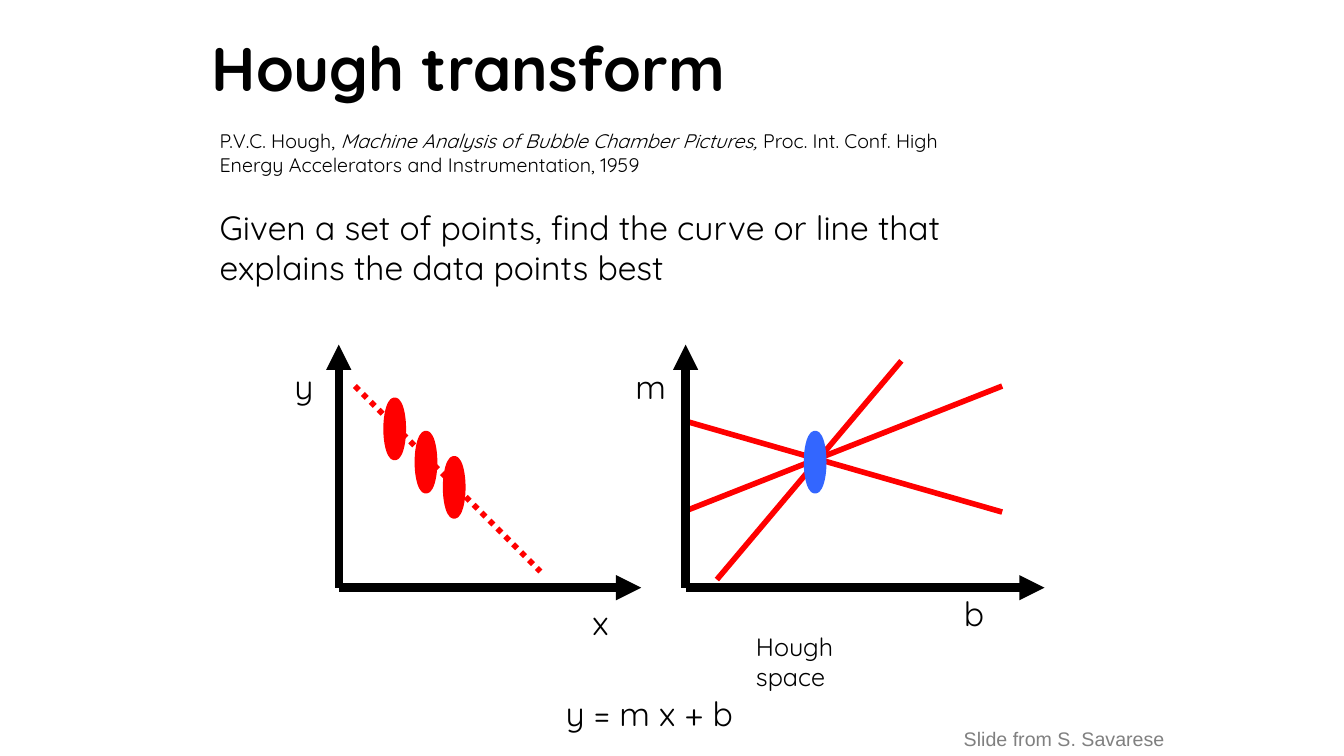
import pptx
import pptx.dml.color
import pptx.enum.dml
import pptx.enum.shapes
import pptx.enum.text
import pptx.oxml
import pptx.oxml.ns
import pptx.util
from dataclasses import dataclass

Inches = pptx.util.Inches
Align = pptx.enum.text.PP_ALIGN
Anchor = pptx.enum.text.MSO_ANCHOR


@dataclass(frozen=True)
class Theme:
    font: str = "Quicksand"
    credit_font: str = "Arial"
    ink: str = "000000"
    data: str = "FF0000"
    solution: str = "3366FF"
    muted: str = "808080"
    title: int = 44
    body: int = 24
    caption: int = 18
    small: int = 14
    axis_width: int = 6
    data_width: int = 4


def apply(target, values):
    for name, value in values.items():
        setattr(target, name, value)


def rgb(color):
    return pptx.dml.color.RGBColor.from_string(color)


class Slide:
    def __init__(self, deck, theme):
        self.theme = theme
        self.slide = deck.slides.add_slide(deck.slide_layouts[5])

    def fill_text(self, frame, runs, size, color=None, font=None, bold=False,
                  align=Align.LEFT, anchor=Anchor.TOP, wrap=True):
        apply(frame, {"word_wrap": wrap, "vertical_anchor": anchor,
                      "auto_size": pptx.enum.text.MSO_AUTO_SIZE.NONE})
        paragraph = frame.paragraphs[0]
        apply(paragraph, {"alignment": align, "space_before": pptx.util.Pt(0)})
        for words, italic in runs:
            run = paragraph.add_run()
            run.text = words
            apply(run.font, {"name": font or self.theme.font, "bold": bold,
                             "size": pptx.util.Pt(size), "italic": italic})
            run.font.color.rgb = rgb(color or self.theme.ink)

    def title(self, words, left, top, width, height):
        heading = self.slide.shapes.title
        apply(heading, {"left": Inches(left), "top": Inches(top),
                        "width": Inches(width), "height": Inches(height)})
        self.fill_text(heading.text_frame, [(words, False)],
                       self.theme.title, bold=True)

    def text(self, runs, left, top, width, height, size, **style):
        box = self.slide.shapes.add_textbox(
            Inches(left), Inches(top), Inches(width), Inches(height))
        if isinstance(runs, str):
            runs = [(runs, False)]
        self.fill_text(box.text_frame, runs, size, **style)

    def label(self, words, left, top, width):
        self.text(words, left, top, width, 0.5, self.theme.body,
                  align=Align.CENTER, wrap=False)

    def line(self, start, end, color, width, dash=None, arrow=False):
        connector = self.slide.shapes.add_connector(
            pptx.enum.shapes.MSO_CONNECTOR.STRAIGHT,
            *(Inches(value) for value in (*start, *end)))
        connector.line.color.rgb = rgb(color)
        apply(connector.line, {"width": pptx.util.Pt(width), "dash_style": dash})
        properties = connector._element.spPr
        if arrow:
            properties.find(pptx.oxml.ns.qn("a:ln")).append(pptx.oxml.parse_xml(
                f'<a:tailEnd {pptx.oxml.ns.nsdecls("a")} type="triangle"/>'))
        properties.append(pptx.oxml.parse_xml(
            f'<a:effectLst {pptx.oxml.ns.nsdecls("a")}/>'))

    def axes(self, left, right, top=3.42, base=5.83):
        for tip in ((left, top), (right, base)):
            self.line((left, base), tip, self.theme.ink,
                      self.theme.axis_width, arrow=True)

    def point(self, left, top, color):
        oval = self.slide.shapes.add_shape(
            pptx.enum.shapes.MSO_SHAPE.OVAL,
            Inches(left), Inches(top), Inches(0.17), Inches(0.57))
        oval.shadow.inherit = False
        oval.fill.solid()
        oval.fill.fore_color.rgb = rgb(color)
        oval.line.color.rgb = rgb(color)
        oval.line.width = pptx.util.Pt(self.theme.data_width)


def main():
    deck = pptx.Presentation()
    apply(deck, {"slide_width": Inches(13.33), "slide_height": Inches(7.5)})
    theme = Theme()
    hough = Slide(deck, theme)

    hough.title("Hough transform", 2, 0.25, 5.83, 0.83)
    hough.text([("P.V.C. Hough, ", False),
                ("Machine Analysis of Bubble Chamber Pictures,", True),
                (" Proc. Int. Conf. High Energy Accelerators and "
                 "Instrumentation, 1959", False)],
               2.08, 1.23, 7.8, 0.57, theme.small, anchor=Anchor.MIDDLE)
    hough.text("Given a set of points, find the curve or line that "
               "explains the data points best",
               2.08, 2, 8.42, 0.91, theme.body)

    hough.line((3.52, 3.83), (5.36, 5.67), theme.data, theme.data_width,
               dash=pptx.enum.dml.MSO_LINE.ROUND_DOT)
    hough.axes(3.36, 6.36)
    for left, top in ((4.42, 4.55), (3.83, 3.97), (4.14, 4.3)):
        hough.point(left, top, theme.data)

    for start, end in (((7.11, 5.75), (8.94, 3.58)),
                       ((6.77, 5.08), (9.94, 3.83)),
                       ((6.77, 4.17), (9.94, 5.08))):
        hough.line(start, end, theme.data, theme.data_width)
    hough.axes(6.8, 10.36)
    hough.point(8, 4.3, theme.solution)

    for words, left, top, width in (("x", 5.77, 5.92, 0.37),
                                    ("y", 2.83, 3.58, 0.37),
                                    ("b", 9.46, 5.83, 0.4),
                                    ("m", 6.21, 3.58, 0.49),
                                    ("y = m x + b", 5.51, 6.83, 1.86)):
        hough.label(words, left, top, width)

    hough.text("Hough space", 7.4, 6.21, 1.5, 0.4, theme.caption)
    hough.text("Slide from S. Savarese", 9.46, 7.16, 2.21, 0.34, theme.small,
               color=theme.muted, font=theme.credit_font, wrap=False)
    deck.save("out.pptx")


if __name__ == "__main__":
    main()
